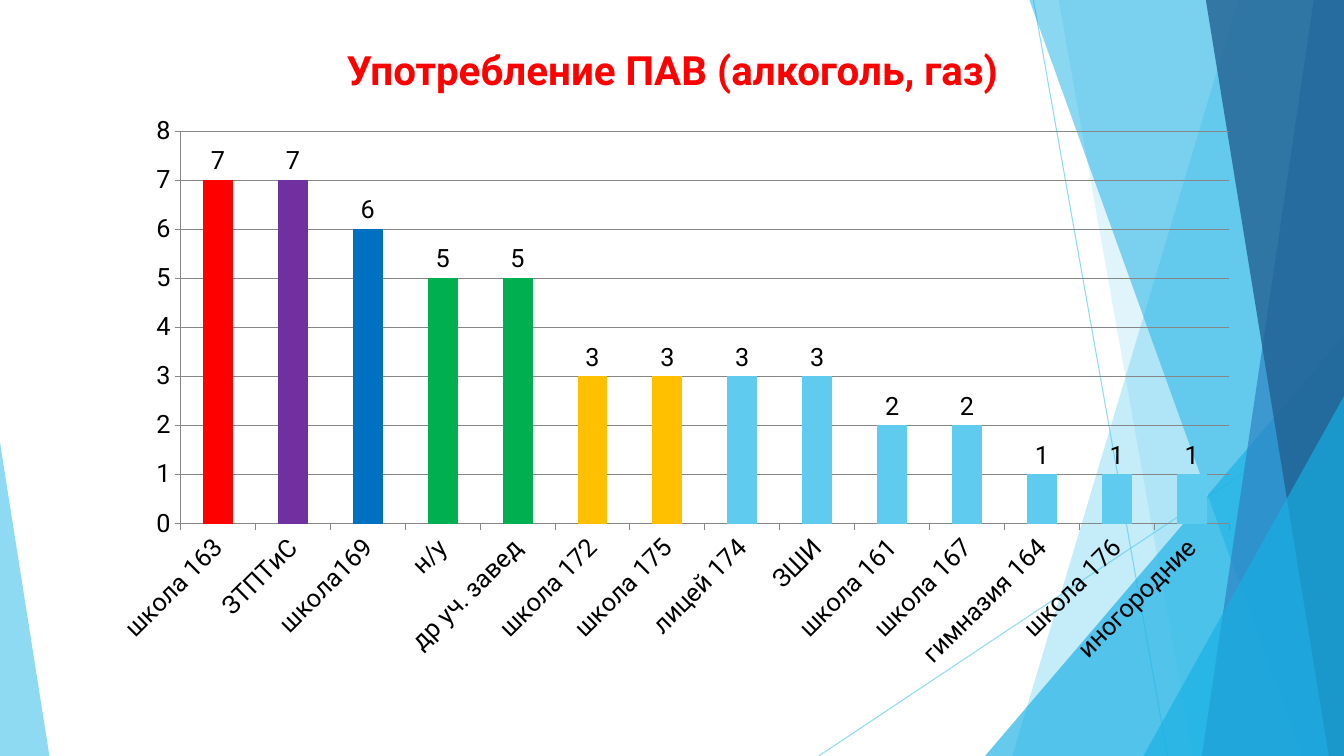
import pptx
import pptx.chart.data
import pptx.dml.color
import pptx.enum.chart
import pptx.enum.shapes
import pptx.enum.text
import pptx.oxml.ns
import pptx.util
from dataclasses import dataclass
from lxml import etree

COLS, ROWS = 13.33, 7.5
CELL = pptx.util.Inches(1)


@dataclass(frozen=True)
class Theme:
    font: str = "Roboto"
    title_size: float = 28.8
    chart_size: float = 18
    hairline: float = 0.75
    title: str = "FF0000"
    text: str = "000000"
    grid: str = "868686"
    sky: str = "5FCBEF"
    azure: str = "17B0E4"
    blue: str = "2E83C3"
    navy: str = "226292"


@dataclass(frozen=True)
class Box:
    left: float
    top: float
    width: float
    height: float

    def point(self, col, row):
        return round((self.left + col) * CELL), round((self.top + row) * CELL)

    def frame(self):
        return [round(v * CELL) for v in (self.left, self.top, self.width, self.height)]


THEME = Theme()
VALUES = [
    ("школа 163", 7, "FF0000"),
    ("ЗТПТиС", 7, "7030A0"),
    ("школа169", 6, "0070C0"),
    ("н/у", 5, "00B050"),
    ("др уч. завед", 5, "00B050"),
    ("школа 172", 3, "FFC000"),
    ("школа 175", 3, "FFC000"),
    ("лицей 174", 3, None),
    ("ЗШИ", 3, None),
    ("школа 161", 2, None),
    ("школа 167", 2, None),
    ("гимназия 164", 1, None),
    ("школа 176", 1, None),
    ("иногородние", 1, None),
]


def rgb(color):
    return pptx.dml.color.RGBColor.from_string(color)


def paint(fill, color, opacity=100):
    fill.solid()
    fill.fore_color.rgb = rgb(color)
    if opacity < 100:
        clr = fill._xPr.find(".//" + pptx.oxml.ns.qn("a:srgbClr"))
        etree.SubElement(clr, pptx.oxml.ns.qn("a:alpha"), val=str(opacity * 1000))


def finish(sp, color, opacity):
    sp.shadow.inherit = False
    sp.line.fill.background()
    paint(sp.fill, color, opacity)


def add_ray(shapes, box, start, end):
    line = shapes.add_connector(
        pptx.enum.shapes.MSO_CONNECTOR.STRAIGHT, *box.point(*start), *box.point(*end))
    line.line.width = pptx.util.Pt(THEME.hairline)
    paint(line.line.fill, THEME.sky, 70)
    etree.SubElement(line._element.spPr, pptx.oxml.ns.qn("a:effectLst"))


def add_facet(shapes, box, top, bottom, color, opacity):
    corners = [(top, 0), (box.width, 0), (box.width, box.height), (bottom, box.height)]
    points = [box.point(*c) for c in corners]
    builder = shapes.build_freeform(*points[0], scale=1.0)
    builder.add_line_segments(points[1:], close=True)
    finish(builder.convert_to_shape(), color, opacity)


def add_corner(shapes, box, apex, color, opacity):
    sp = shapes.add_shape(pptx.enum.shapes.MSO_SHAPE.ISOSCELES_TRIANGLE, *box.frame())
    sp.adjustments[0] = apex
    finish(sp, color, opacity)


def add_right_corner(shapes, box, left, top):
    corner = Box(box.left + left, box.top + top, box.width - left, box.height - top)
    add_corner(shapes, corner, 1, THEME.azure, 66)


def add_facets(shapes, box):
    add_ray(shapes, box, (2.13, 0), (3.46, box.height))
    add_ray(shapes, box, (box.width, 4.03), (0, box.height))
    add_facet(shapes, box, 4.16, 1.92, THEME.sky, 36)
    add_facet(shapes, box, 2.38, 3.71, THEME.sky, 20)
    add_right_corner(shapes, box, 1.65, 3.33)
    add_facet(shapes, box, 2.09, 4.79, THEME.azure, 50)
    add_facet(shapes, box, 4.91, 3.8, THEME.blue, 70)
    add_facet(shapes, box, 3.84, 5.06, THEME.navy, 80)
    add_right_corner(shapes, box, 3.22, 3.93)


def add_title(shapes, box, text):
    tf = shapes.add_textbox(*box.frame()).text_frame
    tf.word_wrap = True
    tf.vertical_anchor = pptx.enum.text.MSO_ANCHOR.MIDDLE
    p = tf.paragraphs[0]
    p.text = text
    p.alignment = pptx.enum.text.PP_ALIGN.CENTER
    p.font.name = THEME.font
    p.font.size = pptx.util.Pt(THEME.title_size)
    p.font.bold = True
    p.font.color.rgb = rgb(THEME.title)


def style_axis(axis):
    axis.major_tick_mark = pptx.enum.chart.XL_TICK_MARK.OUTSIDE
    axis.minor_tick_mark = pptx.enum.chart.XL_TICK_MARK.NONE
    style_line(axis.format.line)


def style_line(line):
    line.width = pptx.util.Pt(THEME.hairline)
    line.color.rgb = rgb(THEME.grid)


def add_column_chart(shapes, box, values):
    data = pptx.chart.data.CategoryChartData()
    data.categories = [name for name, _, _ in values]
    data.add_series("Series 1", [value for _, value, _ in values])
    chart = shapes.add_chart(
        pptx.enum.chart.XL_CHART_TYPE.COLUMN_CLUSTERED, *box.frame(), data).chart
    chart.has_legend = False
    chart.has_title = False
    chart.font.name = THEME.font
    chart.font.size = pptx.util.Pt(THEME.chart_size)
    chart.font.color.rgb = rgb(THEME.text)

    style_axis(chart.category_axis)
    axis = chart.value_axis
    style_axis(axis)
    axis.minimum_scale, axis.maximum_scale, axis.major_unit = 0, 8, 1
    axis.has_major_gridlines = True
    style_line(axis.major_gridlines.format.line)

    plot = chart.plots[0]
    plot.vary_by_categories = False
    plot.gap_width = 150
    plot.has_data_labels = True
    plot.data_labels.show_value = True
    plot.data_labels.position = pptx.enum.chart.XL_LABEL_POSITION.OUTSIDE_END
    series = plot.series[0]
    paint(series.format.fill, THEME.sky)
    for i, (_, _, color) in enumerate(values):
        if color:
            paint(series.points[i].format.fill, color)


def main():
    prs = pptx.Presentation()
    prs.slide_width, prs.slide_height = round(COLS * CELL), round(ROWS * CELL)
    shapes = prs.slides.add_slide(prs.slide_layouts[6]).shapes
    add_facets(shapes, Box(8.12, 0, COLS - 8.12, ROWS))
    add_corner(shapes, Box(0, 4.39, 0.49, ROWS - 4.39), 0, THEME.sky, 70)
    add_title(shapes, Box(0.92, 0.4, 11.5, 0.58), "Употребление ПАВ (алкоголь, газ)")
    add_column_chart(shapes, Box(0.95, 1.04, 11.47, 5.71), VALUES)
    prs.save("out.pptx")


if __name__ == "__main__":
    main()
